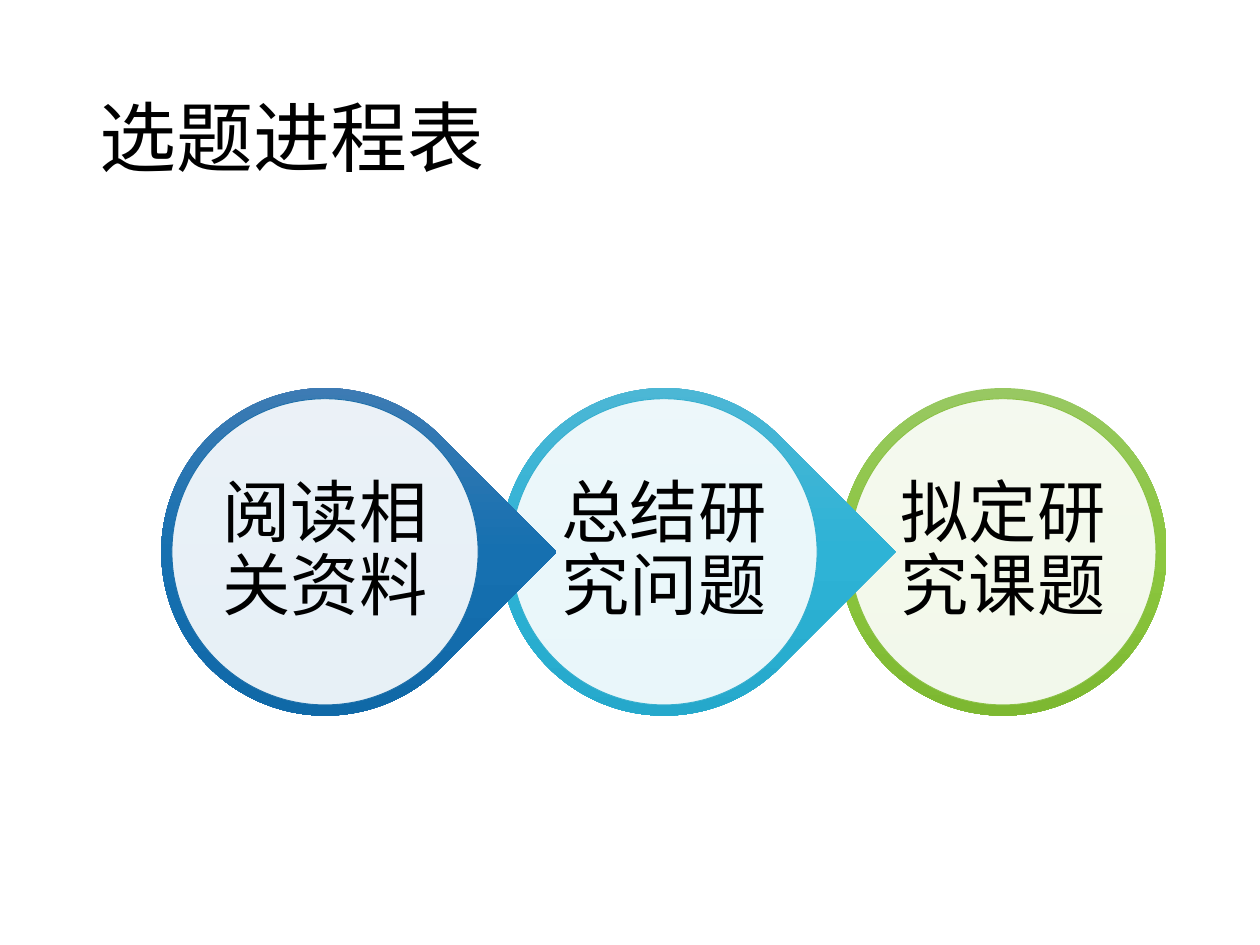
"""Build the slide showing three linked steps of choosing a topic."""
from copy import deepcopy
from lxml import etree
from pptx import Presentation
from pptx import util as u
from pptx.dml.color import RGBColor
from pptx.enum import shapes, text
from pptx.oxml.ns import qn

theme = {
    "font": "Times New Roman", "ink": "000000", "disc": "FFFFFF",
    "title": 44, "step": 39, "rim": 0.5, "clear": 90000,
}
steps = [
    ("阅读相关资料", ("4E80B5", "1670B0", "0D65A3"), "1D6FA9"),
    ("总结研究问题", ("59B8D4", "2EB3D6", "21A4C6"), "36AFCE"),
    ("拟定研究课题", ("98C862", "8CC73F", "7DB831"), "8BC145"),
]

deck = Presentation()
deck.slide_width, deck.slide_height = u.Inches(10), u.Inches(7.5)
page = deck.slides.add_slide(deck.slide_layouts[6])


def square(mid, row, size):
    return [u.Inches(n) for n in (mid - size / 2, row - size / 2, size, size)]


def write(box, words, size):
    frame = box.text_frame
    frame.word_wrap = True
    frame.vertical_anchor = text.MSO_ANCHOR.MIDDLE
    frame.text = words
    line = frame.paragraphs[0]
    line.line_spacing = 0.9
    font = line.runs[0].font
    font.name, font.size = theme["font"], u.Pt(size)
    font.color.rgb = RGBColor.from_string(theme["ink"])
    return frame


title = page.shapes.add_textbox(*[u.Inches(n) for n in (0.69, 0.4, 8.62, 1.45)])
write(title, "选题进程表", theme["title"])

first, pitch, row = 2.58, 2.69, 4.38
group = page.shapes.add_group_shape().shapes
for col, (words, shades, rim) in reversed(list(enumerate(steps))):
    mid = first + col * pitch
    last = col == len(steps) - 1
    kind = shapes.MSO_SHAPE.OVAL if last else shapes.MSO_SHAPE.TEAR
    ring = group.add_shape(kind, *square(mid, row, 2.6))
    ring.rotation = 0 if last else 45
    ring.shadow.inherit = False
    ring.line.fill.background()
    ring.fill.gradient()
    ring.fill.gradient_angle = 270
    grad = ring._element.spPr.find(qn("a:gradFill"))
    grad.set("rotWithShape", "0")
    stops = grad.find(qn("a:gsLst"))
    stops.insert(1, deepcopy(stops[0]))
    for stop, shade, place in zip(ring.fill.gradient_stops, shades, (0, 0.5, 1)):
        stop.color.rgb = RGBColor.from_string(shade)
        stop.position = place

    disc = group.add_shape(shapes.MSO_SHAPE.OVAL, *square(mid, row, 2.43))
    disc.shadow.inherit = False
    disc.fill.solid()
    disc.fill.fore_color.rgb = RGBColor.from_string(theme["disc"])
    tint = disc._element.spPr.find(qn("a:solidFill"))[0]
    etree.SubElement(tint, qn("a:alpha")).set("val", str(theme["clear"]))
    disc.line.color.rgb = RGBColor.from_string(rim)
    disc.line.width = u.Pt(theme["rim"])

    label = group.add_textbox(*square(mid, row, 1.74))
    frame = write(label, words, theme["step"])
    frame.paragraphs[0].alignment = text.PP_ALIGN.CENTER
    frame.margin_left = frame.margin_right = u.Inches(0.05)
    frame.margin_top = frame.margin_bottom = u.Inches(0.05)

deck.save("out.pptx")
